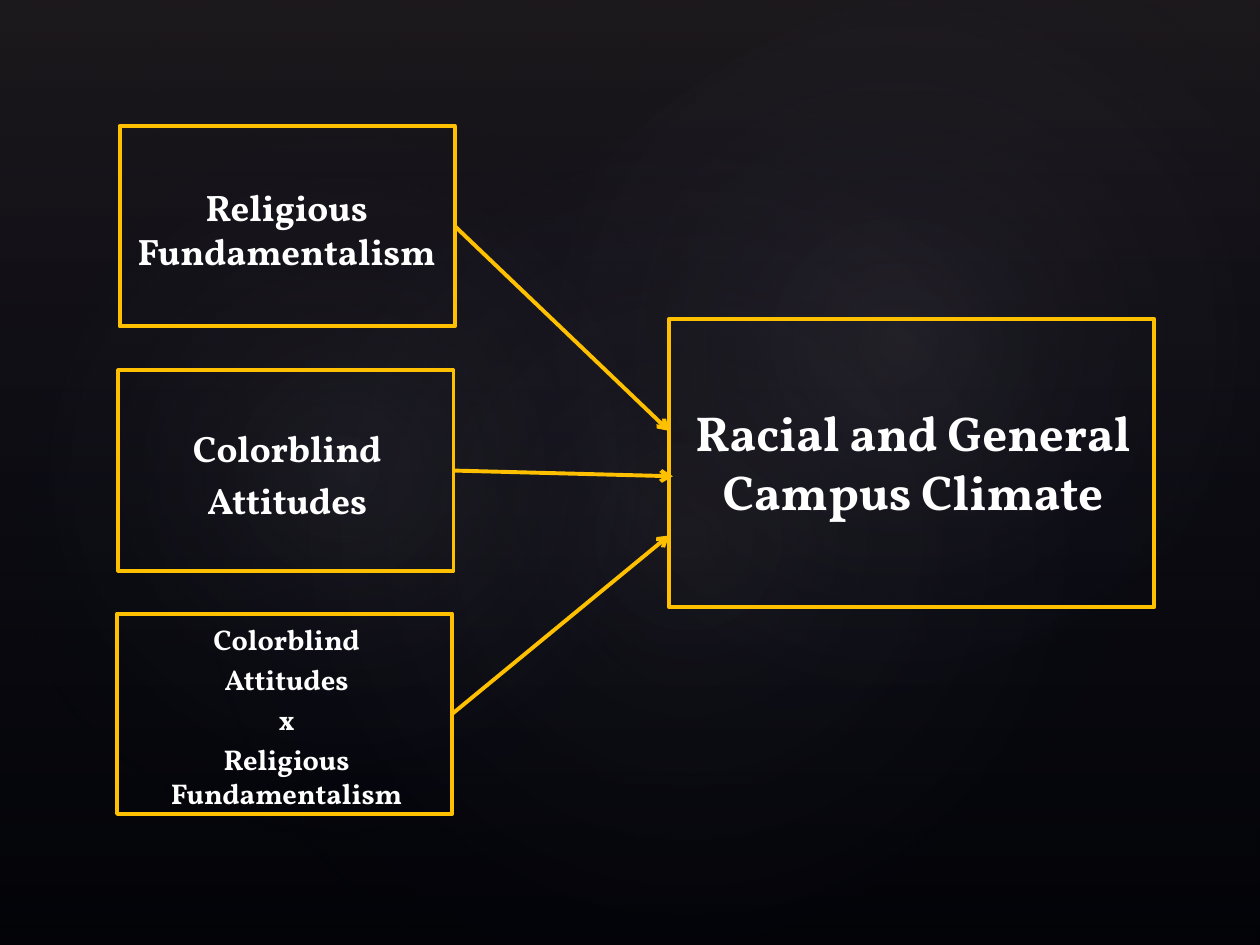
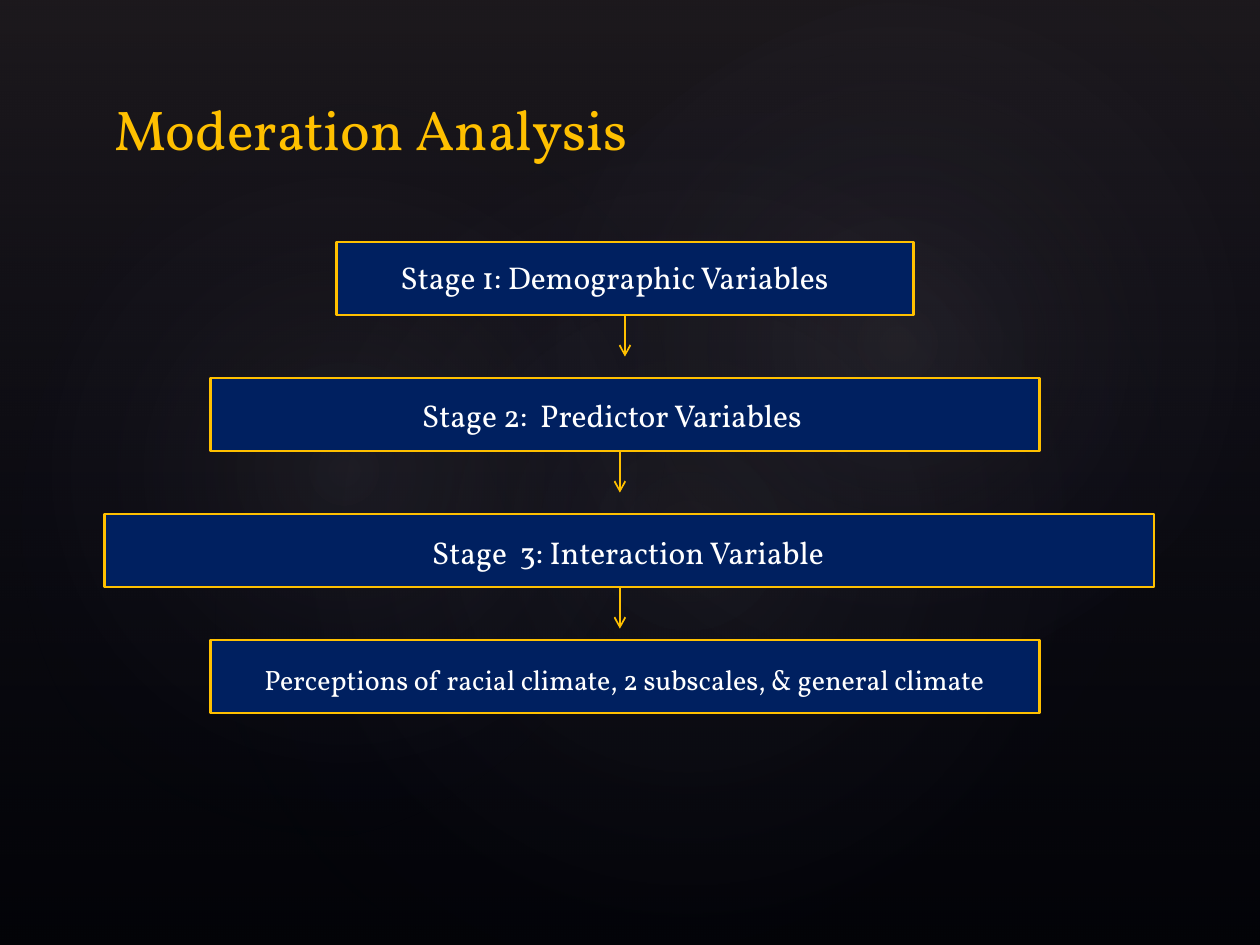
from dataclasses import dataclass

from lxml import etree
from pptx import Presentation
from pptx.dml.color import RGBColor as Rgb
from pptx.enum.shapes import MSO_CONNECTOR as Link, MSO_SHAPE as Kind
from pptx.enum.text import MSO_ANCHOR as Anchor, MSO_AUTO_SIZE as Auto, PP_ALIGN as Align
from pptx.oxml import parse_xml
from pptx.oxml.ns import nsdecls, qn
from pptx.shapes.autoshape import Shape
from pptx.shapes.connector import Connector
from pptx.slide import Slide
from pptx.util import Inches, Pt

HUES = {
    "back": "000000",
    "gold": "FFC000",
    "navy": "002060",
    "text": "FFFFFF",
    "haze": "504652",
    "glow": "C4BCC6",
    "dusk": "242852",
}
FACE = "Vollkorn"


@dataclass
class Box:
    left: float
    top: float
    width: float
    height: float

    def place(self) -> tuple:
        return tuple(Inches(v) for v in (self.left, self.top, self.width, self.height))


@dataclass
class Glow:
    box: Box
    turn: float
    alpha: int


@dataclass
class Cause:
    """One factor: its frame, its label and where its arrow ends."""
    frame: Box
    label: Box
    lines: list
    size: float
    tip: tuple


@dataclass
class Stage:
    bar: Box
    label: Box
    words: str
    size: int
    stem: float = 0


GLOWS = [
    Glow(Box(1.5, 1.14, 7.92, 6.24), 328.7, 7),
    Glow(Box(-0.3, 1.28, 6.06, 4.9), 294.3, 8),
    Glow(Box(3.58, 0.13, 7.09, 5.2), 328.7, 8),
]

CAUSES = [
    Cause(Box(0.95, 1, 2.66, 1.59), Box(0.95, 1.12, 2.65, 1.39),
          ["Religious Fundamentalism"], 21, (5.31, 3.42)),
    Cause(Box(0.94, 2.94, 2.66, 1.59), Box(1.18, 3.05, 2.2, 1.42),
          ["Colorblind", "Attitudes"], 21, (5.34, 3.78)),
    Cause(Box(0.93, 4.87, 2.66, 1.59), Box(1.19, 4.98, 2.17, 1.41),
          ["Colorblind", "Attitudes", "x", "Religious Fundamentalism"], 16.3, (5.31, 4.25)),
]

BAR_H, STEM_H = 0.58, 0.33
STAGES = [
    Stage(Box(2.67, 1.92, 4.58, BAR_H), Box(3.08, 2, 4.42, 0.4),
          "Stage 1: Demographic Variables", 18, 4.96),
    Stage(Box(1.67, 3, 6.58, BAR_H), Box(3.25, 3.09, 4.42, 0.4),
          "Stage 2:  Predictor Variables", 18, 4.92),
    Stage(Box(0.83, 4.08, 8.33, BAR_H), Box(3.33, 4.18, 4.42, 0.4),
          "Stage  3: Interaction Variable", 18, 4.92),
    Stage(Box(1.67, 5.08, 6.58, BAR_H), Box(2, 5.21, 6.58, 0.37),
          "Perceptions of racial climate, 2 subscales, & general climate", 16),
]


def hue(name: str) -> Rgb:
    return Rgb.from_string(HUES[name])


def fade(shape: Shape, stops: list, way: str) -> None:
    """Fill with a gradient of (position, hue, alpha) stops, all in percent."""
    marks = "".join(
        f'<a:gs pos="{pos * 1000}"><a:srgbClr val="{HUES[name]}">'
        f'<a:alpha val="{alpha * 1000}"/></a:srgbClr></a:gs>'
        for pos, name, alpha in stops)
    shape.fill.background()
    props = shape.element.spPr
    props.replace(props.find(qn("a:noFill")), parse_xml(
        f'<a:gradFill {nsdecls("a")} rotWithShape="1"><a:gsLst>{marks}</a:gsLst>{way}</a:gradFill>'))


def set_master(deck, slide: Slide) -> None:
    """Build the backdrop on a slide, then move it to the master."""
    master = deck.slide_master
    master.background.fill.solid()
    master.background.fill.fore_color.rgb = hue("back")
    base = slide.shapes.add_shape(Kind.RECTANGLE, 0, 0, deck.slide_width, deck.slide_height)
    fade(base, [(0, "haze", 36), (100, "dusk", 10)], '<a:lin ang="5400000" scaled="0"/>')
    parts = [base]
    for glow in GLOWS:
        oval = slide.shapes.add_shape(Kind.OVAL, *glow.box.place())
        oval.rotation = glow.turn
        fade(oval, [(0, "glow", glow.alpha), (58, "dusk", 0)],
             '<a:path path="circle"><a:fillToRect l="50000" t="50000" r="50000" b="50000"/></a:path>')
        parts.append(oval)
    for spot, part in enumerate(parts, 2):
        part.line.fill.background()
        part.shadow.inherit = False
        master.shapes.element.insert(spot, part.element)


def add_rect(slide: Slide, box: Box, width: float, fill: str = "") -> Shape:
    rect = slide.shapes.add_shape(Kind.RECTANGLE, *box.place())
    rect.shadow.inherit = False
    if fill:
        rect.fill.solid()
        rect.fill.fore_color.rgb = hue(fill)
    else:
        rect.fill.background()
    rect.line.color.rgb = hue("gold")
    rect.line.width = Pt(width)
    return rect


def add_arrow(slide: Slide, start: tuple, end: tuple, width: float) -> Connector:
    ends = [Inches(v) for v in (*start, *end)]
    arrow = slide.shapes.add_connector(Link.STRAIGHT, *ends)
    arrow.line.color.rgb = hue("gold")
    arrow.line.width = Pt(width)
    props = arrow.element.spPr
    etree.SubElement(props.find(qn("a:ln")), qn("a:tailEnd"), type="arrow")
    etree.SubElement(props, qn("a:effectLst"))
    return arrow


def write(shape: Shape, lines: list, size: float, color: str = "text", bold: bool = False,
          align: Align = Align.LEFT, anchor: Anchor = Anchor.MIDDLE) -> None:
    frame = shape.text_frame
    look = {"word_wrap": True, "auto_size": Auto.NONE, "vertical_anchor": anchor}
    for key, val in look.items():
        setattr(frame, key, val)
    style = {"name": FACE, "size": Pt(size), "bold": bold}
    for num, words in enumerate(lines):
        para = frame.add_paragraph() if num else frame.paragraphs[0]
        para.alignment = align
        para.space_before = Pt(round(size * 0.2, 1) if num else 0)
        props = para._p.get_or_add_pPr()
        props.set("marL", "0")
        props.set("indent", "0")
        etree.SubElement(props, qn("a:buNone"))
        run = para.add_run()
        run.text = words
        for key, val in style.items():
            setattr(run.font, key, val)
        run.font.color.rgb = hue(color)


def move(shape: Shape, box: Box) -> None:
    for key, val in zip(("left", "top", "width", "height"), box.place()):
        setattr(shape, key, val)


def draw_model(slide: Slide) -> None:
    title, body = slide.placeholders
    title.element.getparent().remove(title.element)
    move(body, Box(5.36, 2.68, 3.77, 1.97))
    write(body, ["Racial and General Campus Climate"], 28, bold=True, align=Align.CENTER)
    add_rect(slide, Box(5.31, 2.53, 3.85, 2.29), 2.25)
    for cause in CAUSES:
        frame = add_rect(slide, cause.frame, 2.25)
        label = slide.shapes.add_textbox(*cause.label.place())
        write(label, cause.lines, cause.size, bold=True, align=Align.CENTER)
        arrow = add_arrow(slide, (cause.frame.left, cause.frame.top), cause.tip, 2.25)
        arrow.begin_connect(frame, 3)


def draw_stages(slide: Slide) -> None:
    title = slide.shapes.title
    move(title, Box(0.81, 0.39, 6.67, 1.25))
    write(title, ["Moderation Analysis"], 32, "gold")
    for stage in STAGES:
        bar = add_rect(slide, stage.bar, 1.5, "navy")
        label = slide.shapes.add_textbox(*stage.label.place())
        write(label, [stage.words], stage.size, anchor=Anchor.TOP)
        if stage.stem:
            foot = stage.bar.top + BAR_H
            arrow = add_arrow(slide, (stage.stem, foot), (stage.stem, foot + STEM_H), 1)
            if abs(stage.bar.left + stage.bar.width / 2 - stage.stem) < 0.01:
                arrow.begin_connect(bar, 2)


def main() -> None:
    deck = Presentation()
    deck.slide_width, deck.slide_height = Inches(10), Inches(7.5)
    model = deck.slides.add_slide(deck.slide_layouts[1])
    set_master(deck, model)
    draw_model(model)
    draw_stages(deck.slides.add_slide(deck.slide_layouts[5]))
    deck.save("out.pptx")


if __name__ == "__main__":
    main()
